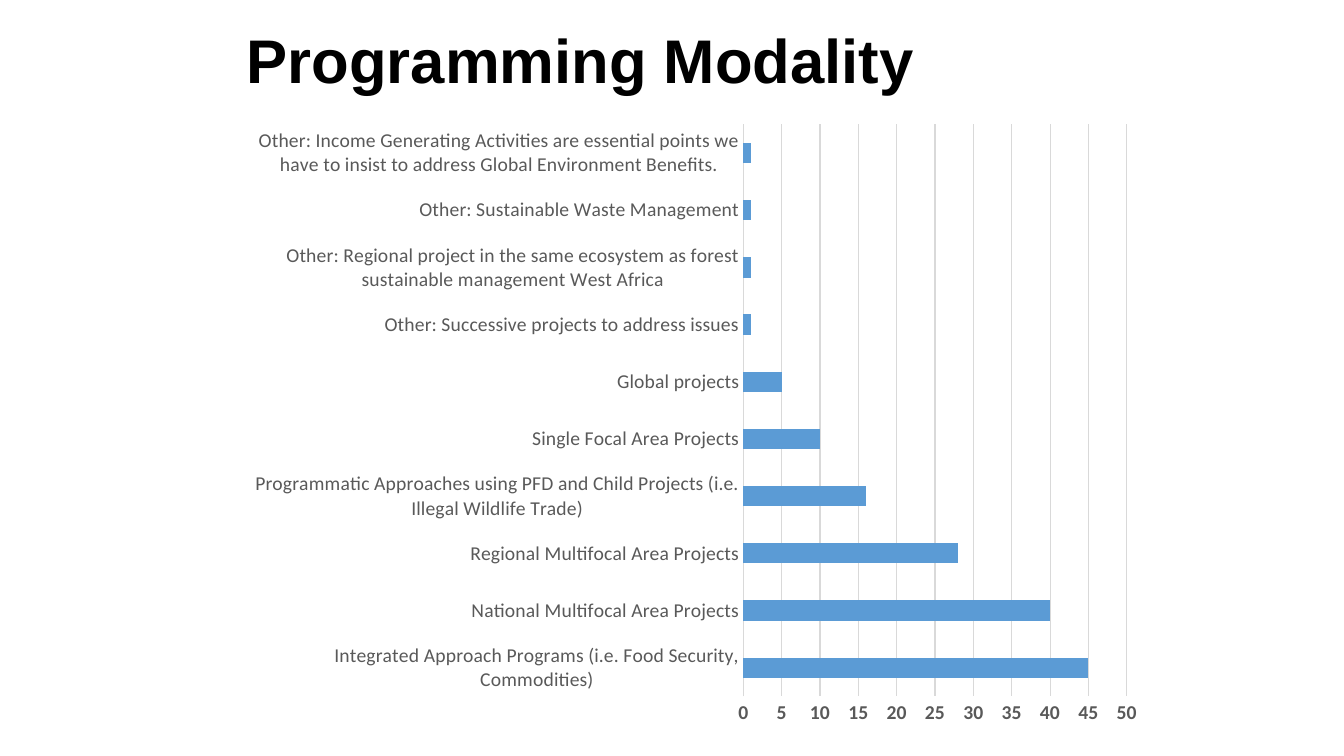
from pptx import Presentation
from pptx.chart.data import CategoryChartData
from pptx.dml.color import RGBColor
from pptx.enum.chart import XL_CHART_TYPE as ChartType, XL_TICK_MARK as TickMark
from pptx.enum.text import MSO_ANCHOR as Anchor
from pptx.util import Pt

MODALITIES = [
    ("Integrated Approach Programs (i.e. Food Security, Commodities)", 45),
    ("National Multifocal Area Projects", 40),
    ("Regional Multifocal Area Projects", 28),
    ("Programmatic Approaches using PFD and Child Projects (i.e. Illegal Wildlife Trade)", 16),
    ("Single Focal Area Projects", 10),
    ("Global projects", 5),
    ("Other: Successive projects to address issues", 1),
    ("Other: Regional project in the same ecosystem as forest sustainable management West Africa", 1),
    ("Other: Sustainable Waste Management", 1),
    ("Other: Income Generating Activities are essential points we have to insist "
     "to address Global Environment Benefits.", 1),
]


def color(hex_code):
    """Turn a hex string into a colour."""
    return RGBColor.from_string(hex_code)


def set_font(font, name, size, hex_code, bold=False):
    """Set the face, size, colour and weight of a font."""
    font.name, font.size, font.bold = name, Pt(size), bold
    font.color.rgb = color(hex_code)


def set_line(line, hex_code):
    """Give a line the thin chart rule style."""
    line.width = Pt(0.75)
    line.color.rgb = color(hex_code)


def add_title(page, box, text):
    """Write the slide title, centred vertically in its box."""
    frame = page.shapes.add_textbox(*map(Pt, box)).text_frame
    frame.word_wrap = True
    frame.vertical_anchor = Anchor.MIDDLE
    para = frame.paragraphs[0]
    para.text = text
    para.line_spacing = 0.9
    set_font(para.font, "Arial", 44, "000000", bold=True)


def style_axis(axis, bold):
    """Remove tick marks and set the label font of an axis."""
    axis.major_tick_mark = axis.minor_tick_mark = TickMark.NONE
    set_font(axis.tick_labels.font, "Calibri", 14, "595959", bold)


def add_bars(page, box, rows):
    """Draw the horizontal bar chart of modalities in its box."""
    data = CategoryChartData()
    data.categories = [label for label, _ in rows]
    data.add_series("Series 1", [count for _, count in rows])
    chart = page.shapes.add_chart(ChartType.BAR_CLUSTERED, *map(Pt, box), data).chart
    chart.has_title = chart.has_legend = False
    set_font(chart.font, "Calibri", 10, "000000")

    labels, scale = chart.category_axis, chart.value_axis
    style_axis(labels, bold=False)
    set_line(labels.format.line, "D9D9D9")
    style_axis(scale, bold=True)
    scale.format.line.fill.background()
    scale.minimum_scale, scale.maximum_scale, scale.major_unit = 0, 50, 5
    scale.has_major_gridlines = True
    set_line(scale.major_gridlines.format.line, "D9D9D9")

    plot = chart.plots[0]
    plot.gap_width = 182
    plot.vary_by_categories = False
    fill = plot.series[0].format.fill
    fill.solid()
    fill.fore_color.rgb = color("5B9BD5")


def main():
    """Build and save the deck."""
    deck = Presentation()
    deck.slide_width, deck.slide_height = Pt(960), Pt(540)
    page = deck.slides.add_slide(deck.slide_layouts[6])
    left, top = 169.2, 80
    add_title(page, (left, 10.8, 620.6, top - 10.8), "Programming Modality")
    add_bars(page, (left, top, 656, 446.4), MODALITIES)
    deck.save("out.pptx")


if __name__ == "__main__":
    main()
